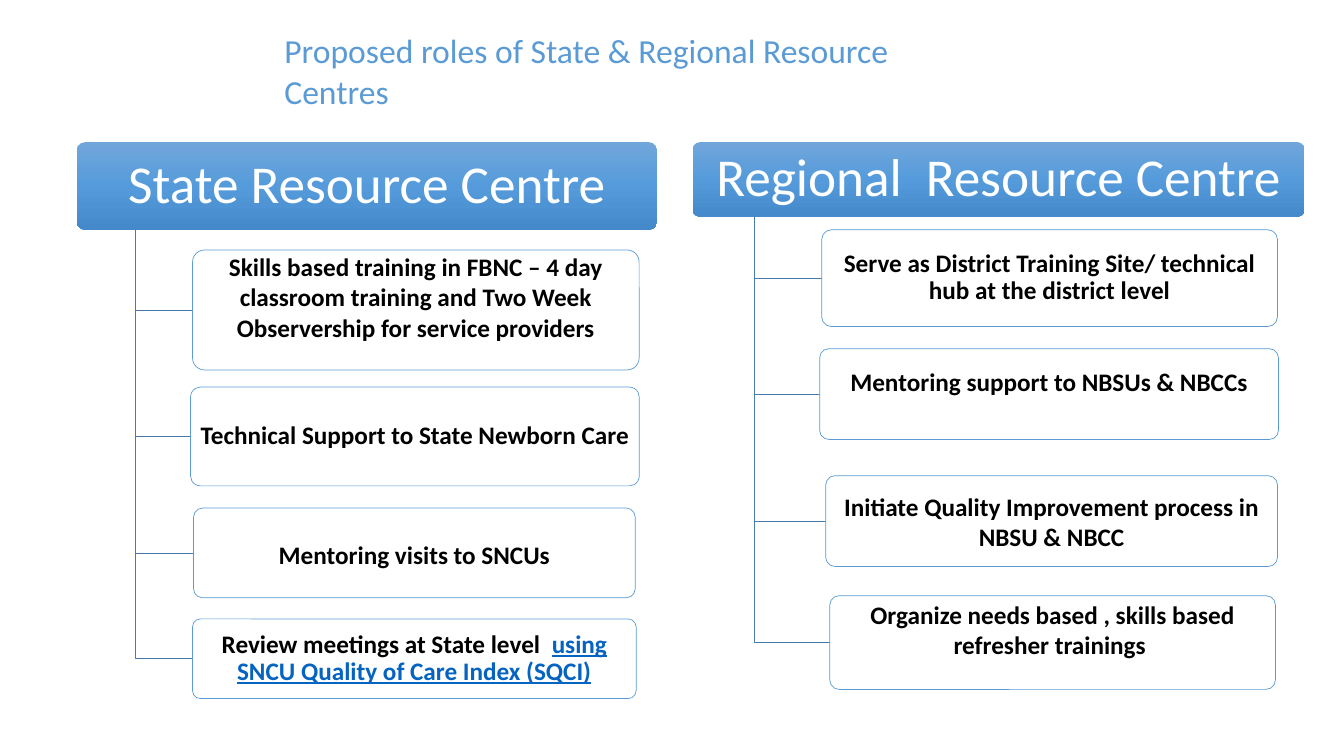
from copy import deepcopy
from dataclasses import dataclass

from pptx import Presentation
from pptx.dml.color import RGBColor
from pptx.enum.shapes import MSO_SHAPE
from pptx.enum.text import MSO_ANCHOR, MSO_AUTO_SIZE, PP_ALIGN
from pptx.oxml.ns import qn
from pptx.util import Inches, Pt


@dataclass(frozen=True)
class Theme:
    font: str = "Calibri"
    title_size: int = 24
    header_size: int = 38
    body_size: int = 18
    accent: str = "5B9BD5"
    line: str = "497CAB"
    white: str = "FFFFFF"
    black: str = "000000"
    link: str = "0563C1"
    gradient: tuple = ((0, "71A6DB"), (0.5, "559BDB"), (1, "448ACA"))
    line_width: float = 0.5


THEME = Theme()
RAISED = 0.26  # extra bottom inset for text that sits above the middle

# Each role: left, top, width, height, text, then format options
STATE = {
    "header": (0.76, 1.41, 5.76, 0.87, "State Resource Centre"),
    "trunk": 1.34,
    "roles": [
        (1.91, 2.48, 4.43, 1.19,
         "Skills based training in FBNC – 4 day classroom training and "
         "Two Week Observership for service providers", {"raised": RAISED}),
        (1.89, 3.84, 4.45, 0.98,
         "Technical Support to State Newborn Care", {"spacing": 0.9}),
        (1.92, 5.04, 4.38, 0.89, "Mentoring visits to SNCUs",
         {"raised": -0.04}),
        (1.91, 6.14, 4.4, 0.79, "Review meetings at State level  ",
         {"spacing": 0.9,
          "link_text": "using SNCU Quality of Care Index (SQCI)"}),
    ],
}
REGIONAL = {
    "header": (6.87, 1.41, 6.07, 0.74, "Regional  Resource Centre"),
    "trunk": 7.48,
    "roles": [
        (8.15, 2.28, 4.52, 0.96,
         "Serve as District Training Site/ technical hub at the district level",
         {"spacing": 0.9}),
        (8.13, 3.46, 4.55, 0.9,
         "Mentoring support to NBSUs & NBCCs", {"raised": RAISED}),
        (8.19, 4.72, 4.48, 0.9,
         "Initiate Quality Improvement process in NBSU & NBCC", {}),
        (8.23, 5.91, 4.42, 0.93,
         "Organize needs based , skills based refresher trainings ",
         {"raised": RAISED}),
    ],
}


def add_run(paragraph, text, size, color, bold=False, underline=False):
    run = paragraph.add_run()
    run.text = text
    font = run.font
    font.name, font.size = THEME.font, Pt(size)
    font.bold, font.underline = bold, underline
    font.color.rgb = RGBColor.from_string(color)


def write_text(shape, text, *, size, color, bold=False, spacing=1.0,
               align=PP_ALIGN.CENTER, anchor=MSO_ANCHOR.MIDDLE,
               inset=(0.07, 0.05), raised=0, link_text=""):
    frame = shape.text_frame
    frame.word_wrap = True
    frame.auto_size = MSO_AUTO_SIZE.NONE
    frame.vertical_anchor = anchor
    frame.margin_left = frame.margin_right = Inches(inset[0])
    frame.margin_top = Inches(inset[1])
    frame.margin_bottom = Inches(inset[1] + raised)
    paragraph = frame.paragraphs[0]
    paragraph.alignment = align
    paragraph.line_spacing = spacing
    add_run(paragraph, text, size, color, bold)
    if link_text:
        add_run(paragraph, link_text, size, THEME.link, bold, underline=True)


def set_line(shape, color):
    shape.line.color.rgb = RGBColor.from_string(color)
    shape.line.width = Pt(THEME.line_width)


def add_rounded_box(slide, left, top, width, height):
    shape = slide.shapes.add_shape(
        MSO_SHAPE.ROUNDED_RECTANGLE, Inches(left), Inches(top),
        Inches(width), Inches(height))
    shape.adjustments[0] = 0.1
    shape.shadow.inherit = False
    return shape


def add_header(slide, left, top, width, height, text):
    shape = add_rounded_box(slide, left, top, width, height)
    shape.line.fill.background()
    fill = shape.fill
    fill.gradient()
    fill.gradient_angle = 270
    # The default gradient has two stops; add the third
    stop_list = shape.element.spPr.find(qn("a:gradFill")).find(qn("a:gsLst"))
    stop_list.append(deepcopy(stop_list[-1]))
    for stop, (position, color) in zip(fill.gradient_stops, THEME.gradient):
        stop.position = position
        stop.color.rgb = RGBColor.from_string(color)
    write_text(shape, text, size=THEME.header_size, color=THEME.white,
               spacing=0.9, inset=(0.1, 0.08))


def add_role(slide, left, top, width, height, text, options):
    shape = add_rounded_box(slide, left, top, width, height)
    shape.fill.solid()
    shape.fill.fore_color.rgb = RGBColor.from_string(THEME.white)
    set_line(shape, THEME.accent)
    write_text(shape, text, size=THEME.body_size, color=THEME.black,
               bold=True, **options)


def add_elbow(slide, trunk, top, right, bottom):
    builder = slide.shapes.build_freeform(Inches(trunk), Inches(top))
    builder.add_line_segments(
        [(Inches(trunk), Inches(bottom)), (Inches(right), Inches(bottom))],
        close=False)
    elbow = builder.convert_to_shape()
    elbow.fill.background()
    elbow.shadow.inherit = False
    set_line(elbow, THEME.line)


def add_centre(slide, centre):
    add_header(slide, *centre["header"])
    header_bottom = centre["header"][1] + centre["header"][3]
    # One elbow from the header to the left side of each role
    for left, top, width, height, text, options in centre["roles"]:
        add_elbow(slide, centre["trunk"], header_bottom, left,
                  top + height / 2)
        add_role(slide, left, top, width, height, text, options)


def add_title(slide, text):
    title = slide.shapes.title
    title.left, title.top = Inches(2.72), Inches(0.25)
    title.width, title.height = Inches(7.25), Inches(0.9)
    write_text(title, text, size=THEME.title_size, color=THEME.accent,
               align=PP_ALIGN.LEFT, anchor=MSO_ANCHOR.TOP, inset=(0.1, 0.05))


def main():
    presentation = Presentation()
    presentation.slide_width = Inches(13.33)
    presentation.slide_height = Inches(7.5)
    slide = presentation.slides.add_slide(presentation.slide_layouts[5])
    add_title(slide, "Proposed roles of State & Regional Resource Centres")
    for centre in (STATE, REGIONAL):
        add_centre(slide, centre)
    presentation.save("out.pptx")


if __name__ == "__main__":
    main()
